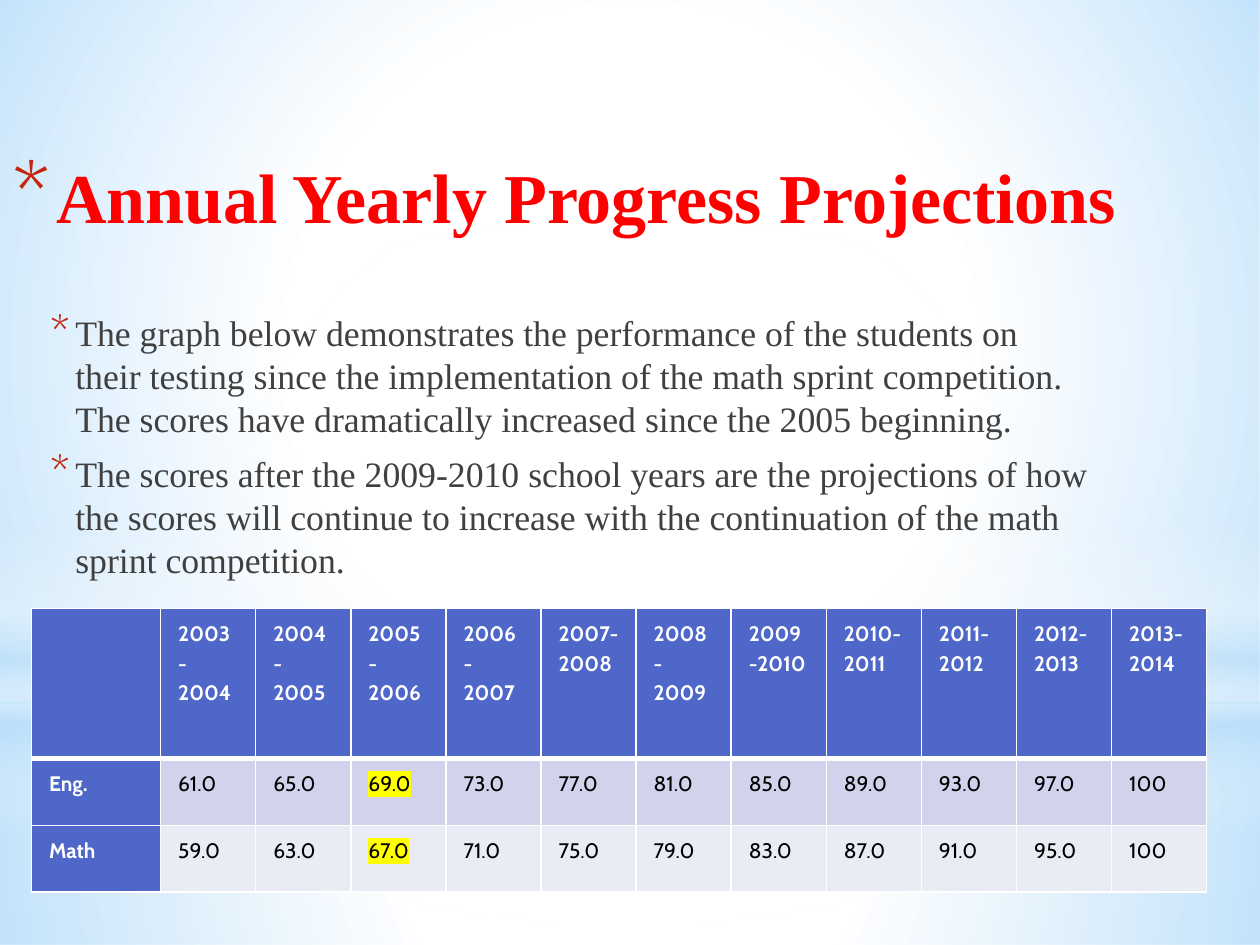
from lxml import etree
from pptx import Presentation
from pptx.dml.color import RGBColor
from pptx.enum import shapes, text
from pptx.oxml import parse_xml
from pptx.oxml.ns import nsdecls, qn
from pptx.util import Inches, Pt

WHITE = RGBColor(0xFF, 0xFF, 0xFF)
BLACK = RGBColor(0, 0, 0)
SKY = RGBColor(0xB4, 0xDC, 0xFA)
RED = RGBColor(0xFF, 0, 0)
RUST = RGBColor(0xC3, 0x26, 0x0C)
GRAY = RGBColor(0x40, 0x40, 0x40)
BLUE = RGBColor(0x4E, 0x67, 0xC8)
YELLOW = RGBColor(0xFF, 0xFF, 0)
BANDS = [RGBColor(0xD0, 0xD3, 0xEB), RGBColor(0xE9, 0xEB, 0xF5)]
SERIF, SANS = "Times New Roman", "Cabin"

TITLE = "Annual Yearly Progress Projections"
BODY = [
    "The graph below demonstrates the performance of the students on their testing since the "
    "implementation of the math sprint competition. The scores have dramatically increased "
    "since the 2005 beginning.",
    "The scores after the 2009-2010 school years are the projections of how the scores will "
    "continue to increase with the continuation of the math sprint competition.",
]
YEARS = ["2003-2004", "2004- 2005", "2005-2006", "2006-2007", "2007-2008", "2008-2009",
         "2009-2010", "2010-2011", "2011-2012", "2012-2013", "2013-2014"]
ENGLISH = ["61.0", "65.0", "69.0", "73.0", "77.0", "81.0", "85.0", "89.0", "93.0", "97.0", "100"]
MATH = ["59.0", "63.0", "67.0", "71.0", "75.0", "79.0", "83.0", "87.0", "91.0", "95.0", "100"]
ROWS = [[""] + YEARS, ["Eng."] + ENGLISH, ["Math"] + MATH]
HIGHLIGHT_COL = 3

CIRCLE = '<a:path path="circle"><a:fillToRect l="50000" t="50000" r="50000" b="50000"/></a:path>'
DOWNWARD = '<a:lin ang="5400000" scaled="0"/>'


def add_glow(s, kind, box, stops, direction):
    """Add a borderless shape with a translucent gradient."""
    sp = s.shapes.add_shape(kind, *map(Inches, box))
    sp.shadow.inherit = False
    sp.line.fill.background()
    marks = "".join(
        f'<a:gs pos="{pos * 1000}"><a:srgbClr val="{color}">'
        f'<a:alpha val="{alpha * 1000}"/></a:srgbClr></a:gs>'
        for pos, color, alpha in stops)
    geometry = sp._element.spPr.find(qn("a:prstGeom"))
    geometry.addnext(parse_xml(
        f'<a:gradFill {nsdecls("a")} rotWithShape="1"><a:gsLst>{marks}</a:gsLst>'
        f'{direction}</a:gradFill>'))


def add_backdrop(s, width, height, horizon):
    """Paint the sky, the ground, the horizon band and the central glow."""
    rect, oval = shapes.MSO_SHAPE.RECTANGLE, shapes.MSO_SHAPE.OVAL
    add_glow(s, rect, (0, horizon, width, height - horizon),
             [(0, WHITE, 91), (37, WHITE, 76), (100, SKY, 79)], CIRCLE)
    add_glow(s, rect, (0, 0, width, horizon),
             [(0, WHITE, 89), (48, WHITE, 62), (100, SKY, 79)], CIRCLE)
    add_glow(s, rect, (0, 4.12, width, 2.5),
             [(0, WHITE, 0), (29, WHITE, 30), (45, SKY, 40), (55, WHITE, 26),
              (65, SKY, 60), (100, WHITE, 0)], DOWNWARD)
    add_glow(s, oval, (0, 1.75, width, horizon), [(0, WHITE, 100), (56, WHITE, 0)], CIRCLE)


def style_run(r, font, size, color, bold=False):
    """Set the font of a run."""
    r.font.name, r.font.size, r.font.bold = font, Pt(size), bold
    r.font.color.rgb = color


def add_bullet(p, margin, hanging, percent):
    """Give a paragraph a rust asterisk and a hanging indent."""
    pPr = p._p.get_or_add_pPr()
    pPr.set("marL", str(Inches(margin)))
    pPr.set("indent", str(-Inches(hanging)))
    color = etree.SubElement(pPr, qn("a:buClr"))
    etree.SubElement(color, qn("a:srgbClr"), val=str(RUST))
    etree.SubElement(pPr, qn("a:buSzPct"), val=str(percent * 1000))
    etree.SubElement(pPr, qn("a:buFont"), typeface=SANS)
    etree.SubElement(pPr, qn("a:buChar"), char="*")


def add_bulleted_text(s, box, lines, size, color, bold, bullet, before=0, after=0):
    """Add a text box of bulleted paragraphs."""
    tf = s.shapes.add_textbox(*map(Inches, box)).text_frame
    tf.word_wrap = True
    tf.vertical_anchor = text.MSO_ANCHOR.TOP
    tf.text = "\n".join(lines)
    for p in tf.paragraphs:
        p.space_before, p.space_after = Pt(before), Pt(after)
        add_bullet(p, *bullet)
        style_run(p.runs[0], SERIF, size, color, bold)


def set_borders(cell, top, bottom):
    """Draw white borders around a cell."""
    tcPr = cell._tc.get_or_add_tcPr()
    widths = {"lnL": 1, "lnR": 1, "lnT": top, "lnB": bottom}
    for i, (side, width) in enumerate(widths.items()):
        tcPr.insert(i, parse_xml(
            f'<a:{side} {nsdecls("a")} w="{Pt(width)}"><a:solidFill>'
            f'<a:srgbClr val="{WHITE}"/></a:solidFill></a:{side}>'))


def highlight(r):
    """Mark a run in yellow."""
    mark = parse_xml(f'<a:highlight {nsdecls("a")}><a:srgbClr val="{YELLOW}"/></a:highlight>')
    r._r.rPr.find(qn("a:solidFill")).addnext(mark)


def fill_cell(cell, value, row, col):
    """Write and format one cell by its place in the table."""
    heading = row == 0 or col == 0
    cell.fill.solid()
    cell.fill.fore_color.rgb = BLUE if heading else BANDS[row - 1]
    set_borders(cell, 3 if row == 1 else 1, 3 if row == 0 else 1)
    cell.margin_left = cell.margin_right = Inches(0.14)
    cell.margin_top = cell.margin_bottom = Inches(0.07)
    cell.text = value
    p = cell.text_frame.paragraphs[0]
    p.line_spacing = 1.15
    for r in p.runs:
        style_run(r, SANS, 12, WHITE if heading else BLACK, heading)
        if col == HIGHLIGHT_COL and not heading:
            highlight(r)


def add_score_table(s, left, top, width, height):
    """Add the table of scores by school year."""
    frame = s.shapes.add_table(len(ROWS), len(ROWS[0]), *map(Inches, (left, top, width, height)))
    table = frame.table
    year_width, score_height = 0.755, 0.53
    for i, column in enumerate(table.columns):
        column.width = Inches(year_width if i else width - year_width * len(YEARS))
    for i, row in enumerate(table.rows):
        row.height = Inches(score_height if i else height - 2 * score_height)
    for i, values in enumerate(ROWS):
        for j, value in enumerate(values):
            fill_cell(table.cell(i, j), value, i, j)


def main():
    """Build the slide and save it."""
    prs = Presentation()
    prs.slide_width, prs.slide_height = Inches(10), Inches(7.5)
    s = prs.slides.add_slide(prs.slide_layouts[6])
    s.background.fill.solid()
    s.background.fill.fore_color.rgb = WHITE
    add_backdrop(s, 10, 7.5, 5.58)
    add_bulleted_text(s, (0, 1.17, 9.65, 1.25), [TITLE], 40, RED, True, (0.35, 0.35, 128))
    add_bulleted_text(s, (0.25, 2.42, 8.5, 2.17), BODY, 20.4, GRAY, False,
                      (0.25, 0.2, 130), before=4, after=3)
    add_score_table(s, 0.25, 4.83, 9.33, 2.25)
    prs.save("out.pptx")


if __name__ == "__main__":
    main()
